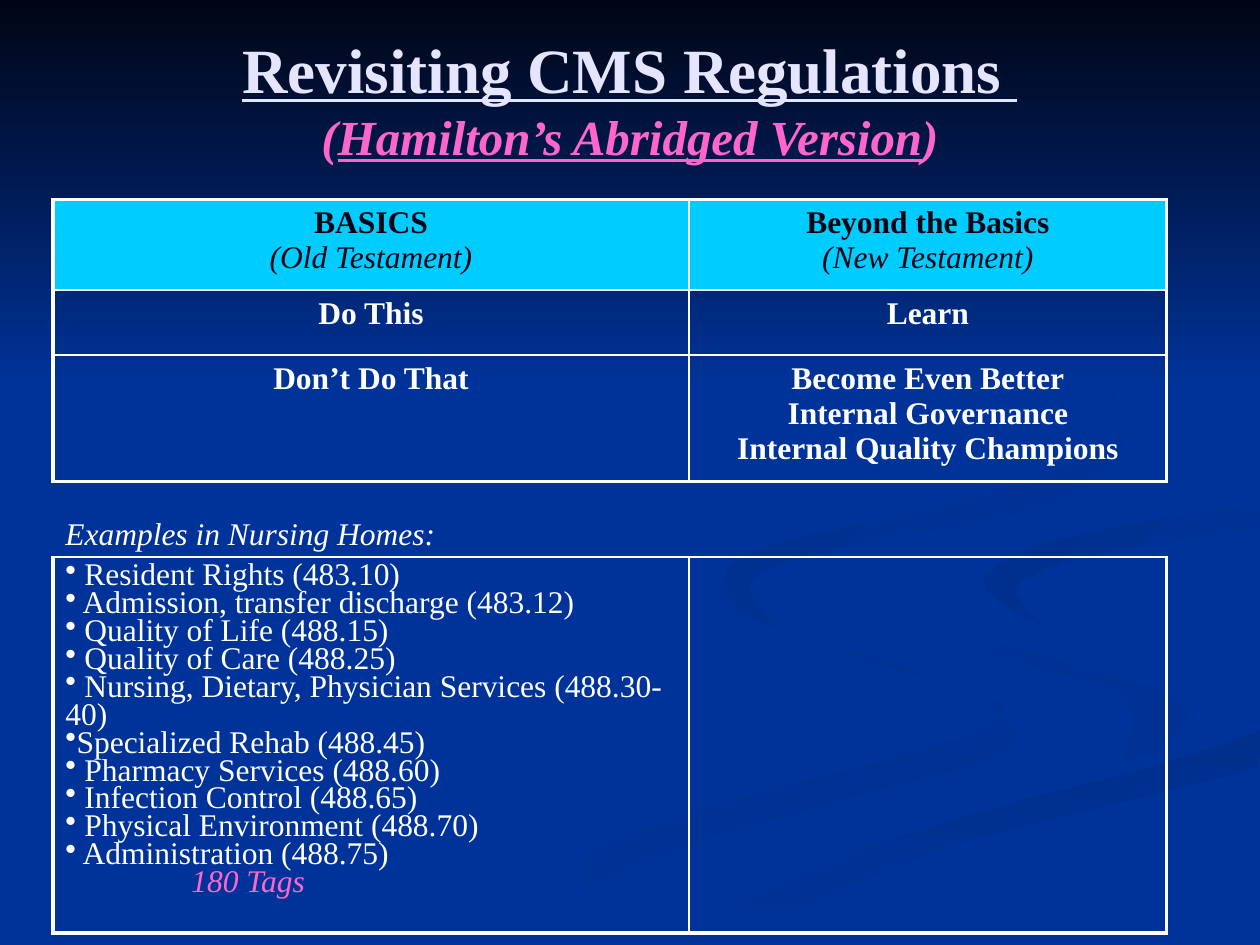
from lxml.etree import SubElement
from pptx import Presentation
from pptx.dml.color import RGBColor
from pptx.enum.shapes import MSO_SHAPE as Shape
from pptx.enum.text import MSO_ANCHOR as Anchor, PP_ALIGN as Align
from pptx.oxml.ns import qn
from pptx.util import Pt

FONT = "Times New Roman"
NAVY = RGBColor(0x00, 0x05, 0x14)
BLUE = RGBColor(0x00, 0x33, 0x99)
BLUE_SOFT = RGBColor(0x00, 0x31, 0x93)
BLUE_DEEP = RGBColor(0x00, 0x2F, 0x8C)
CYAN = RGBColor(0x00, 0xCC, 0xFF)
LAVENDER = RGBColor(0xE5, 0xE5, 0xFF)
PINK = RGBColor(0xFF, 0x66, 0xCC)
WHITE = RGBColor(0xFF, 0xFF, 0xFF)
WIDTH, HEIGHT = 720, 540

# Content
TITLE = "Revisiting CMS Regulations "
SUBTITLE = "Hamilton’s Abridged Version"
HEADERS = [("BASICS", "(Old Testament)"), ("Beyond the Basics", "(New Testament)")]
BODY = [
    (["Do This"], ["Learn"]),
    (["Don’t Do That"],
     ["Become Even Better", "Internal Governance", "Internal Quality Champions"]),
]
EXAMPLES_HEADING = "Examples in Nursing Homes:"
EXAMPLES = [
    " Resident Rights (483.10)",
    " Admission, transfer discharge (483.12)",
    " Quality of Life (488.15)",
    " Quality of Care (488.25)",
    " Nursing, Dietary, Physician Services (488.30-40)",
    "Specialized Rehab (488.45)",
    " Pharmacy Services (488.60)",
    " Infection Control (488.65)",
    " Physical Environment (488.70)",
    " Administration (488.75)",
]
TAG_COUNT = "180 Tags"
COLUMNS = [363.6, 272.9]
ROWS = [51.8, 37.2, 66.8, 43.4, 198.5]

# Background ribbons, back to front: first colour, last colour, clockwise angle, key points
RIBBONS = [
    (BLUE, BLUE_SOFT, 0, [
        (562, 398), (451, 361), (414, 330), (427, 354), (534, 388), (562, 417),
        (388, 467), (216, 539), (260, 539), (406, 479), (566, 433), (572, 408)]),
    (BLUE, BLUE_SOFT, 45, [
        (679, 410), (639, 385), (536, 353), (521, 334), (552, 369), (642, 398), (644, 436)]),
    (BLUE_DEEP, BLUE, 90, [
        (362, 539), (411, 539), (541, 484), (719, 438), (719, 418), (550, 466), (431, 508)]),
    (BLUE, BLUE, 0, [
        (522, 334), (558, 362), (670, 398), (667, 427), (507, 472), (343, 539), (374, 538),
        (501, 482), (719, 418), (719, 387), (611, 362), (562, 333), (623, 305), (719, 289),
        (719, 279), (554, 307)]),
    (BLUE_DEEP, BLUE, 45, [
        (562, 331), (595, 357), (582, 333), (645, 313), (719, 302), (719, 289), (611, 307)]),
    (BLUE_DEEP, BLUE, 45, [
        (492, 310), (594, 290), (644, 248), (607, 198), (549, 168), (621, 210), (638, 251),
        (549, 287), (430, 315), (418, 341), (448, 360), (429, 332)]),
]
CURVE_STEPS = 5


def smooth_outline(points):
    """Closed Catmull-Rom curve through the key points, kept on the slide."""
    curve = []
    for i, p1 in enumerate(points):
        p0, p2, p3 = points[i - 1], points[(i + 1) % len(points)], points[(i + 2) % len(points)]
        for step in range(CURVE_STEPS):
            t = step / CURVE_STEPS
            x, y = (b + t * (c - a) / 2 + t**2 * (2 * a - 5 * b + 4 * c - d) / 2
                    + t**3 * (3 * b - a - 3 * c + d) / 2
                    for a, b, c, d in zip(p0, p1, p2, p3))
            curve.append((min(x, WIDTH), min(y, HEIGHT)))
    return curve


def shade(shape, start, end, angle):
    shape.shadow.inherit = False
    shape.line.fill.background()
    shape.fill.gradient()
    shape.fill.gradient_angle = -angle % 360
    for stop, color in zip(shape.fill.gradient_stops, (start, end)):
        stop.color.rgb = color


def add_text(paragraph, text, size=18, color=WHITE, bold=False, italic=False, underline=False):
    run = paragraph.add_run()
    run.text = text
    font = run.font
    font.name, font.size = FONT, Pt(size)
    font.bold, font.italic, font.underline = bold, italic, underline
    font.color.rgb = color


def next_paragraph(frame, align=Align.LEFT, spacing=1.0):
    first = frame.paragraphs[0]
    paragraph = frame.add_paragraph() if first.runs else first
    paragraph.alignment, paragraph.line_spacing = align, spacing
    return paragraph


def set_bullet(paragraph):
    properties = paragraph._p.get_or_add_pPr()
    properties.set("marL", "0")
    properties.set("indent", "0")
    SubElement(properties, qn("a:buChar"), char="•")


def set_borders(cell, **widths):
    properties = cell._tc.get_or_add_tcPr()
    for side, width in widths.items():
        line = SubElement(properties, qn(f"a:ln{side}"), w=str(Pt(width)))
        if width:
            fill = SubElement(line, qn("a:solidFill"))
            SubElement(fill, qn("a:srgbClr"), val=str(WHITE))
        else:
            SubElement(line, qn("a:noFill"))


deck = Presentation()
deck.slide_width, deck.slide_height = Pt(WIDTH), Pt(HEIGHT)
slide = deck.slides.add_slide(deck.slide_layouts[6])
slide.background.fill.solid()
slide.background.fill.fore_color.rgb = BLUE

# Ribbons and top shade
for start, end, angle, points in RIBBONS:
    outline = smooth_outline(points)
    builder = slide.shapes.build_freeform(*outline[0], scale=Pt(1))
    builder.add_line_segments(outline[1:], close=True)
    shade(builder.convert_to_shape(), start, end, angle)
top_shade = slide.shapes.add_shape(Shape.RECTANGLE, 0, 0, Pt(WIDTH), Pt(222))
shade(top_shade, NAVY, BLUE, 90)

# Title
title = slide.shapes.add_textbox(Pt(36), Pt(21.6), Pt(648), Pt(68.4)).text_frame
title.word_wrap, title.vertical_anchor = True, Anchor.MIDDLE
heading = next_paragraph(title, Align.CENTER)
add_text(heading, TITLE, size=36, color=LAVENDER, bold=True, underline=True)
heading.add_line_break()
for part, underline in (("(", False), (SUBTITLE, True), (")", False)):
    add_text(heading, part, size=28, color=PINK, bold=True, italic=True, underline=underline)

# Table grid
table = slide.shapes.add_table(len(ROWS), len(COLUMNS), Pt(30.2), Pt(114),
                               Pt(sum(COLUMNS)), Pt(sum(ROWS))).table
table.first_row = table.horz_banding = False
for column, width in zip(table.columns, COLUMNS):
    column.width = Pt(width)
for row, height in zip(table.rows, ROWS):
    row.height = Pt(height)
for r in range(len(ROWS)):
    for c in range(len(COLUMNS)):
        cell = table.cell(r, c)
        outer, inner = (0, 0) if r == 3 else (2.25, 1)
        set_borders(cell, L=inner if c else outer, R=outer if c else inner,
                    T=2.25 if r in (0, 3) else 1, B=2.25 if r in (2, 4) else 1)
        if r == 0:
            cell.fill.solid()
            cell.fill.fore_color.rgb = CYAN
        else:
            cell.fill.background()

# Headers and comparison rows
for c, (name, testament) in enumerate(HEADERS):
    frame = table.cell(0, c).text_frame
    add_text(next_paragraph(frame, Align.CENTER), name, color=NAVY, bold=True)
    add_text(next_paragraph(frame, Align.CENTER), testament, color=NAVY, italic=True)
for r, columns in enumerate(BODY, start=1):
    for c, lines in enumerate(columns):
        for line in lines:
            add_text(next_paragraph(table.cell(r, c).text_frame, Align.CENTER), line, bold=True)

# Examples
examples_heading = table.cell(3, 0)
examples_heading.merge(table.cell(3, 1))
examples_heading.vertical_anchor = Anchor.BOTTOM
add_text(next_paragraph(examples_heading.text_frame, spacing=0.8), EXAMPLES_HEADING, italic=True)
examples = table.cell(4, 0).text_frame
for example in EXAMPLES:
    item = next_paragraph(examples, spacing=0.8)
    set_bullet(item)
    add_text(item, example)
tags = next_paragraph(examples, spacing=0.8)
tags._p.get_or_add_pPr().set("marL", str(Pt(72)))
add_text(tags, TAG_COUNT, color=PINK, italic=True)

deck.save("out.pptx")
